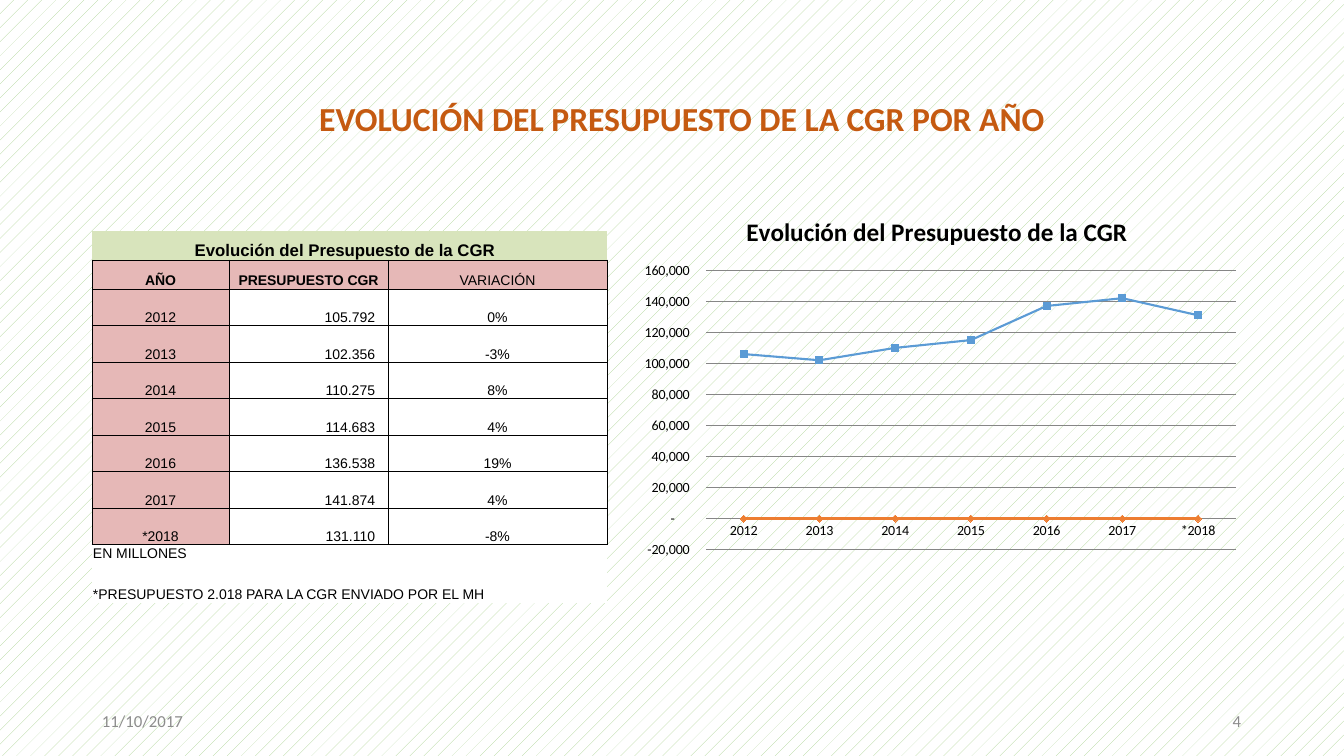
from lxml import etree
from pptx import Presentation
from pptx.chart.data import CategoryChartData
from pptx.dml.color import RGBColor
from pptx.enum.chart import XL_CHART_TYPE, XL_MARKER_STYLE, XL_TICK_MARK
from pptx.enum.dml import MSO_PATTERN
from pptx.enum.text import MSO_ANCHOR, PP_ALIGN
from pptx.oxml import parse_xml
from pptx.oxml.ns import nsdecls, qn
from pptx.util import Pt

LINE_MARKERS = XL_CHART_TYPE.LINE_MARKERS
SQUARE, DIAMOND = XL_MARKER_STYLE.SQUARE, XL_MARKER_STYLE.DIAMOND
NO_TICK = XL_TICK_MARK.NONE
DOTS = MSO_PATTERN.PERCENT_5
TOP, MIDDLE, BOTTOM = MSO_ANCHOR.TOP, MSO_ANCHOR.MIDDLE, MSO_ANCHOR.BOTTOM
LEFT, CENTER, RIGHT = PP_ALIGN.LEFT, PP_ALIGN.CENTER, PP_ALIGN.RIGHT

PX = 914400 / 100.8
PLAIN_TABLE_STYLE = "{2D5ABB26-0587-4C30-8999-92F81FD0307C}"
COLORS = {
    "black": "000000", "white": "FFFFFF", "heading": "C55A11",
    "footer": "8C8C8C", "dots": "A9D18E", "table title": "D8E4BC",
    "pink": "E6B8B7", "budget": "5B9BD5", "variation": "ED7D31",
    "grid": "868686",
}
BUDGETS = [
    ("2012", "105.792", "0%"),
    ("2013", "102.356", "-3%"),
    ("2014", "110.275", "8%"),
    ("2015", "114.683", "4%"),
    ("2016", "136.538", "19%"),
    ("2017", "141.874", "4%"),
    ("*2018", "131.110", "-8%"),
]


def px(length):
    return round(length * PX)


def style_font(font, name, size, color, bold=False):
    font.name = name
    font.size = Pt(size)
    font.bold = bold
    font.color.rgb = RGBColor.from_string(COLORS[color])


presentation = Presentation()
presentation.slide_width = px(1344)
presentation.slide_height = px(756)
slide = presentation.slides.add_slide(presentation.slide_layouts[6])
background = slide.background.fill
background.patterned()
background.pattern = DOTS
background.fore_color.rgb = RGBColor.from_string(COLORS["dots"])
background.back_color.rgb = RGBColor.from_string(COLORS["white"])

# Heading and footer
texts = [
    ("EVOLUCIÓN DEL PRESUPUESTO DE LA CGR POR AÑO",
     (178, 98, 1008, 41), CENTER, TOP, 24, "heading", True),
    ("11/10/2017", (92, 701, 302, 40), LEFT, MIDDLE, 12, "footer", False),
    ("4", (949, 701, 302, 40), RIGHT, MIDDLE, 12, "footer", False),
]
for text, box, alignment, anchor, size, color, bold in texts:
    text_frame = slide.shapes.add_textbox(*map(px, box)).text_frame
    text_frame.word_wrap = True
    text_frame.vertical_anchor = anchor
    text_frame.text = text
    paragraph = text_frame.paragraphs[0]
    paragraph.alignment = alignment
    paragraph.line_spacing = 0.9 if bold else 1.0
    style_font(paragraph.runs[0].font, "Calibri", size, color, bold)

# Budget table
rows = [
    ("Evolución del Presupuesto de la CGR", "", ""),
    ("AÑO", "PRESUPUESTO CGR", "VARIACIÓN"),
    *BUDGETS,
    ("EN MILLONES", "", ""),
    ("*PRESUPUESTO 2.018 PARA LA CGR ENVIADO POR EL MH", "", ""),
]
last_row = len(rows) - 1
units_row = last_row - 1
table = slide.shapes.add_table(
    len(rows), 3, px(92), px(231), px(515), px(372)).table
table.first_row = False
table.horz_banding = False
table._tbl.tblPr.find(qn("a:tableStyleId")).text = PLAIN_TABLE_STYLE
for column, width in zip(table.columns, (137, 159, 219)):
    column.width = px(width)

for row_index, values in enumerate(rows):
    is_budget = 2 <= row_index < units_row
    table.rows[row_index].height = px(256 / len(BUDGETS) if is_budget else 29)
    for column_index, value in enumerate(values):
        cell = table.cell(row_index, column_index)
        cell.margin_left = cell.margin_right = cell.margin_top = px(1)
        cell.margin_bottom = 0
        cell.vertical_anchor = TOP if row_index == units_row else BOTTOM
        cell.text = value
        paragraph = cell.text_frame.paragraphs[0]
        paragraph.alignment = LEFT if row_index >= units_row else CENTER
        if row_index == 0:
            cell.margin_right = px(10)
        if is_budget and column_index == 1:
            paragraph.alignment = RIGHT
            cell.margin_right = px(13)
        bold = row_index == 0 or (row_index == 1 and column_index < 2)
        for run in paragraph.runs:
            style_font(run.font, "Arial", 12 if row_index == 0 else 10,
                       "black", bold)
        if not value:
            etree.SubElement(paragraph._p, qn("a:endParaRPr"), sz="1000")

        if 1 <= row_index < units_row:
            ruled_sides = ("lnL", "lnR", "lnT", "lnB")
        else:
            ruled_sides = {0: ("lnB",), units_row: ("lnT",)}.get(row_index, ())
        for side in ("lnL", "lnR", "lnT", "lnB"):
            border = etree.SubElement(
                cell._tc.get_or_add_tcPr(), qn(f"a:{side}"), w="6350")
            if side in ruled_sides:
                border_fill = etree.SubElement(border, qn("a:solidFill"))
                etree.SubElement(
                    border_fill, qn("a:srgbClr"), val=COLORS["black"])
            else:
                etree.SubElement(border, qn("a:noFill"))
        if row_index == 0:
            fill = "table title"
        elif row_index == 1 or (is_budget and column_index == 0):
            fill = "pink"
        else:
            fill = "white"
        cell.fill.solid()
        cell.fill.fore_color.rgb = RGBColor.from_string(COLORS[fill])
for row_index in (0, last_row):
    table.cell(row_index, 0).merge(table.cell(row_index, 2))

# Budget chart, in whole thousands
chart_data = CategoryChartData()
chart_data.categories = [year for year, _, _ in BUDGETS]
chart_data.add_series(
    "Presupuesto", [round(float(budget)) * 1000 for _, budget, _ in BUDGETS])
chart_data.add_series("Variación", [0] * len(BUDGETS))
chart = slide.shapes.add_chart(
    LINE_MARKERS, px(623), px(197), px(628), px(378), chart_data).chart
style_font(chart.font, "Calibri", 10, "black")
chart.has_legend = False
chart.has_title = True
chart.chart_title.include_in_layout = False
chart.chart_title.text_frame.text = "Evolución del Presupuesto de la CGR"
style_font(chart.chart_title.text_frame.paragraphs[0].runs[0].font,
           "Calibri", 18, "black", True)

plot_area = chart._chartSpace.chart.plotArea
for layout in plot_area.findall(qn("c:layout")):
    plot_area.remove(layout)
plot_area.insert(0, parse_xml(
    f'<c:layout {nsdecls("c")}><c:manualLayout><c:layoutTarget val="inner"/>'
    '<c:xMode val="edge"/><c:yMode val="edge"/><c:x val="0.132"/>'
    '<c:y val="0.194"/><c:w val="0.844"/><c:h val="0.739"/>'
    '</c:manualLayout></c:layout>'))

category_axis, value_axis = chart.category_axis, chart.value_axis
for axis in (category_axis, value_axis):
    axis.major_tick_mark = axis.minor_tick_mark = NO_TICK
    style_font(axis.tick_labels.font, "Calibri", 10, "black")
value_axis.minimum_scale = -20000
value_axis.maximum_scale = 160000
value_axis.major_unit = 20000
value_axis.tick_labels.number_format = (
    '_-* #,##0\\ _€_-;\\-* #,##0\\ _€_-;_-* "-"??\\ _€_-')
value_axis.tick_labels.number_format_is_linked = False
value_axis.format.line.fill.background()
for line in (category_axis.format.line, value_axis.major_gridlines.format.line):
    line.width = Pt(0.75)
    line.color.rgb = RGBColor.from_string(COLORS["grid"])

for series, color, marker in zip(
        chart.plots[0].series, ("budget", "variation"), (SQUARE, DIAMOND)):
    rgb = RGBColor.from_string(COLORS[color])
    series.smooth = False
    series.format.line.width = Pt(1.5)
    series.format.line.color.rgb = rgb
    series.marker.style = marker
    series.marker.size = 5
    series.marker.format.fill.solid()
    series.marker.format.fill.fore_color.rgb = rgb
    series.marker.format.line.color.rgb = rgb
chart.plots[0].vary_by_categories = False

presentation.save("out.pptx")
